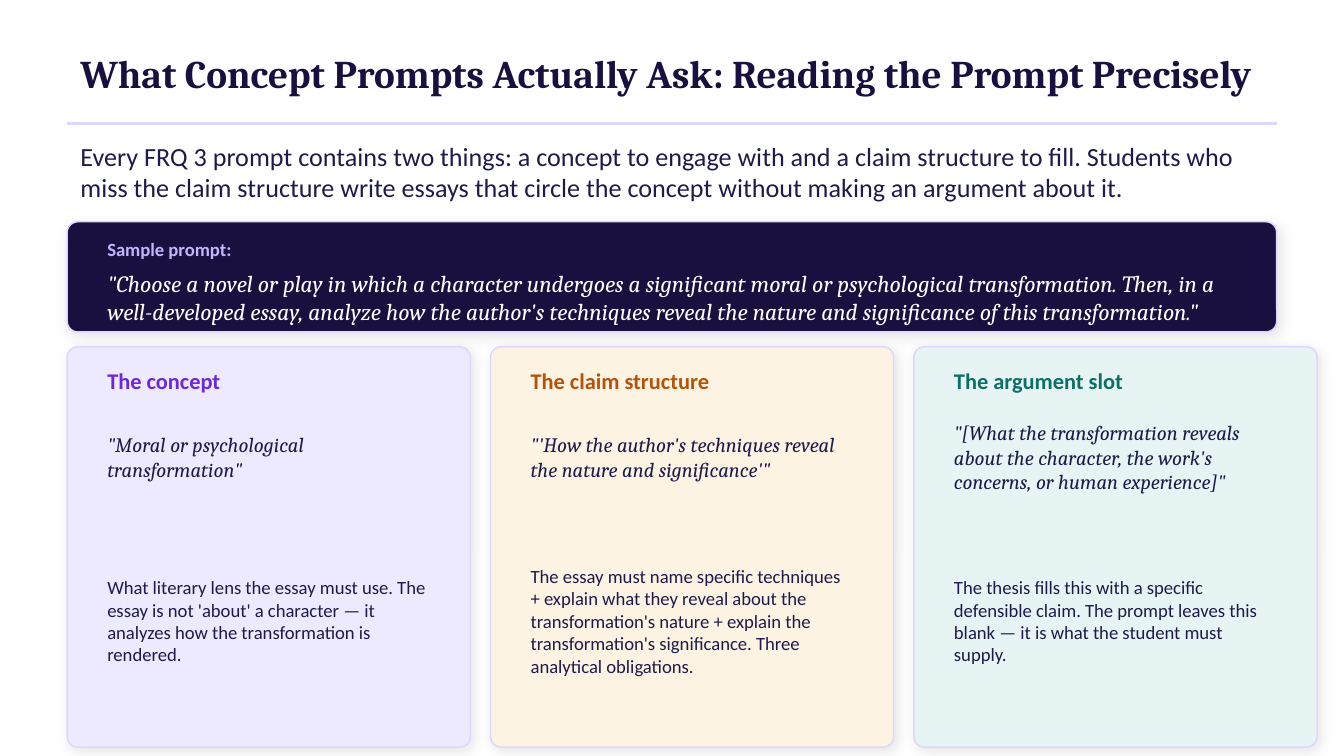
from lxml.etree import SubElement
from pptx import Presentation
from pptx.dml.color import RGBColor as RGB
from pptx.enum.shapes import MSO_CONNECTOR as CONN, MSO_SHAPE as SHAPE
from pptx.enum.text import MSO_ANCHOR as ANCHOR
from pptx.oxml.ns import qn
from pptx.util import Emu, Pt

PX = 9144  # EMU per px, 100 px to the inch
COLORS = {
    "white": "FFFFFF", "navy": "1A1040", "ink": "1E1B4B", "border": "DDD6FE",
    "lilac": "C4B5FD", "violet": "6D28D9", "amber": "B45309", "teal": "0D6F66",
    "violet_tint": "EDE9FE", "amber_tint": "FDF3E3", "teal_tint": "E6F5F3",
}
SANS, SERIF = "Calibri", "Cambria"
FORMATS = {
    "title": dict(name=SERIF, size=21, bold=True),
    "intro": dict(name=SANS, size=14),
    "label": dict(name=SANS, size=10, bold=True),
    "prompt": dict(name=SERIF, size=12.5, italic=True),
    "heading": dict(name=SANS, size=12, bold=True),
    "quote": dict(name=SERIF, size=11, italic=True),
    "body": dict(name=SANS, size=10),
}


def px(n):
    return Emu(round(n * PX))


def rgb(name):
    return RGB.from_string(COLORS[name])


class Deck:
    RADIUS = 8

    def __init__(self, w):
        self.prs = Presentation()
        self.prs.slide_width = px(w)
        self.prs.slide_height = px(w * 9 / 16)

    def slide(self, color):
        self.s = self.prs.slides.add_slide(self.prs.slide_layouts[6])
        fill = self.s.background.fill
        fill.solid()
        fill.fore_color.rgb = rgb(color)

    def text(self, x, y, w, h, text, style, color):
        tf = self.s.shapes.add_textbox(px(x), px(y), px(w), px(h)).text_frame
        tf.word_wrap = True
        tf.vertical_anchor = ANCHOR.MIDDLE
        r = tf.paragraphs[0].add_run()
        r.text = text
        for key, value in FORMATS[style].items():
            setattr(r.font, key, Pt(value) if key == "size" else value)
        r.font.color.rgb = rgb(color)

    def rule(self, x, y, w):
        ln = self.s.shapes.add_connector(CONN.STRAIGHT, px(x), px(y), px(x + w), px(y))
        ln.line.color.rgb = rgb("border")
        ln.line.width = Pt(1.2)
        SubElement(ln._element.spPr, qn("a:effectLst"))

    def panel(self, x, y, w, h, color):
        sp = self.s.shapes.add_shape(SHAPE.ROUNDED_RECTANGLE, px(x), px(y), px(w), px(h))
        sp.adjustments[0] = self.RADIUS / min(w, h)
        sp.fill.solid()
        sp.fill.fore_color.rgb = rgb(color)
        sp.line.color.rgb = rgb("border")
        sp.line.width = Pt(0.8)
        self.soft_shadow(sp)

    def soft_shadow(self, sp):
        sp.shadow.inherit = False
        effects = sp._element.spPr.find(qn("a:effectLst"))
        shadow = SubElement(effects, qn("a:outerShdw"), blurRad=str(Pt(7)),
                            dist=str(Pt(2)), dir=str(45 * 60000),
                            algn="bl", rotWithShape="0")
        tint = SubElement(shadow, qn("a:srgbClr"), val="000000")
        SubElement(tint, qn("a:alpha"), val="9000")

    def card(self, x, y, w, h, fill, accent, heading, quote, body):
        self.panel(x, y, w, h, fill)
        rows = [(8, 34, heading, "heading", accent),
                (46, 72, quote, "quote", "ink"),
                (126, 156, body, "body", "ink")]
        for dy, height, text, style, color in rows:
            self.text(x + 20, y + dy, w - 40, height, text, style, color)


CARDS = [
    ("violet_tint", "violet", "The concept",
     '"Moral or psychological transformation"',
     "What literary lens the essay must use. The essay is not 'about' a character — "
     "it analyzes how the transformation is rendered."),
    ("amber_tint", "amber", "The claim structure",
     "\"'How the author's techniques reveal the nature and significance'\"",
     "The essay must name specific techniques + explain what they reveal about the "
     "transformation's nature + explain the transformation's significance. "
     "Three analytical obligations."),
    ("teal_tint", "teal", "The argument slot",
     "\"[What the transformation reveals about the character, the work's concerns, "
     "or human experience]\"",
     "The thesis fills this with a specific defensible claim. The prompt leaves this "
     "blank — it is what the student must supply."),
]


def main():
    deck = Deck(1000)
    deck.slide("white")
    left, width = 50, 900

    # Title and introduction
    deck.text(left, 22, width, 65,
              "What Concept Prompts Actually Ask: Reading the Prompt Precisely",
              "title", "navy")
    deck.rule(left, 92, width)
    deck.text(left, 100, width, 55,
              "Every FRQ 3 prompt contains two things: a concept to engage with and a "
              "claim structure to fill. Students who miss the claim structure write "
              "essays that circle the concept without making an argument about it.",
              "intro", "ink")

    # Sample prompt
    deck.panel(left, 165, width, 82, "navy")
    deck.text(left + 20, 172, width - 40, 26, "Sample prompt:", "label", "lilac")
    deck.text(left + 20, 202, width - 40, 38,
              '"Choose a novel or play in which a character undergoes a significant moral '
              "or psychological transformation. Then, in a well-developed essay, analyze "
              "how the author's techniques reveal the nature and significance of this "
              'transformation."',
              "prompt", "white")

    # Three parts of the prompt
    card_w, gap = 300, 15
    for i, card in enumerate(CARDS):
        deck.card(left + i * (card_w + gap), 258, card_w, 298, *card)

    deck.prs.save("out.pptx")


if __name__ == "__main__":
    main()
